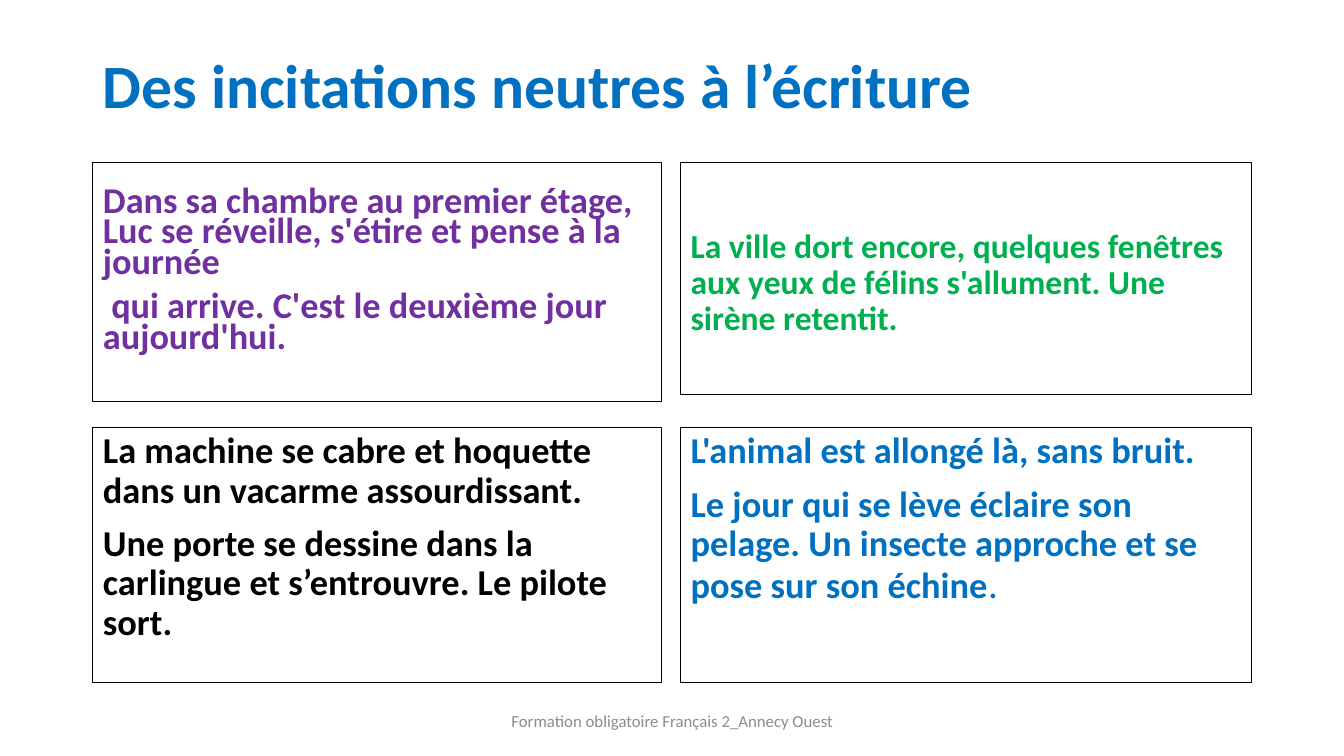
from lxml import etree
from pptx import Presentation
from pptx.dml.color import RGBColor
from pptx.enum import text
from pptx.oxml.ns import qn
from pptx.util import Cm, Pt

LEFT, RIGHT, TOP, BOTTOM = 2.34, 17.15, 4.09, 10.77
LEFT_WIDTH, RIGHT_WIDTH, BOTTOM_HEIGHT = 14.33, 14.4, 6.43
BLUE = "0070C0"


def colour(value):
    """Turn a hex string into a colour."""
    return RGBColor.from_string(value)


def style(font, size, value, bold=True):
    """Set the look of a paragraph or a span."""
    font.name, font.size, font.bold = "Calibri", Pt(size), bold
    font.color.rgb = colour(value)


def place(shape, left, top, width, height):
    """Move and size a shape, in centimetres."""
    shape.left, shape.top = Cm(left), Cm(top)
    shape.width, shape.height = Cm(width), Cm(height)


def set_frame(shape, anchor):
    """Wrap the text of a shape at its full size."""
    frame = shape.text_frame
    frame.word_wrap = True
    frame.auto_size = text.MSO_AUTO_SIZE.NONE
    frame.vertical_anchor = anchor
    return frame


def add_title(page, wording):
    """Fill the title placeholder."""
    title = page.shapes.title
    place(title, LEFT, 1.02, 29.21, 2.44)
    para = set_frame(title, text.MSO_ANCHOR.MIDDLE).paragraphs[0]
    para.text = wording
    para.alignment = text.PP_ALIGN.LEFT
    para.line_spacing = 0.9
    style(para.font, 44, BLUE)


def add_prompt(box, bounds, wordings, size, value, spacing=0.9, lift=None):
    """Fill a framed box; a lift raises bottom-anchored text."""
    place(box, *bounds)
    box.line.color.rgb = colour("000000")
    box.line.width = Pt(0.75)
    anchor = text.MSO_ANCHOR.BOTTOM if lift else text.MSO_ANCHOR.TOP
    frame = set_frame(box, anchor)
    if lift:
        frame.margin_bottom = Cm(lift)
    for index, wording in enumerate(wordings):
        para = frame.add_paragraph() if index else frame.paragraphs[0]
        para.text = wording
        properties = para._p.get_or_add_pPr()
        properties.set("marL", "0")
        properties.set("indent", "0")
        etree.SubElement(properties, qn("a:buNone"))
        para.alignment = text.PP_ALIGN.LEFT
        para.line_spacing = spacing
        para.space_before = Pt(10 if index else 0)
        style(para.font, size, value)
    return para


def add_footer(page, wording):
    """Add the centred line at the foot of the page."""
    box = page.shapes.add_textbox(0, 0, 0, 0)
    place(box, 11.23, 17.65, 11.43, 1.02)
    para = set_frame(box, text.MSO_ANCHOR.MIDDLE).paragraphs[0]
    para.text = wording
    para.alignment = text.PP_ALIGN.CENTER
    style(para.font, 12, "8C8C8C", bold=False)


def main():
    """Build the slide of four writing prompts."""
    deck = Presentation()
    deck.slide_width, deck.slide_height = Cm(33.87), Cm(19.05)
    page = deck.slides.add_slide(deck.slide_layouts[4])
    bedroom, machine, city, animal = list(page.placeholders)[1:]

    add_title(page, "Des incitations neutres à l’écriture")
    arrival = add_prompt(
        bedroom, (LEFT, TOP, LEFT_WIDTH, 6.02),
        ["Dans sa chambre au premier étage, Luc se réveille, s'étire et pense à la journée",
         "qui arrive. C'est le deuxième jour aujourd'hui."],
        25.9, "7030A0", spacing=0.7, lift=1.15)
    arrival._p.get_or_add_pPr().set("indent", str(Cm(0.21)))
    add_prompt(
        machine, (LEFT, BOTTOM, LEFT_WIDTH, BOTTOM_HEIGHT),
        ["La machine se cabre et hoquette dans un vacarme assourdissant.",
         "Une porte se dessine dans la carlingue et s’entrouvre. Le pilote sort."],
        26, "000000")
    add_prompt(
        city, (RIGHT, TOP, RIGHT_WIDTH, 5.84),
        ["La ville dort encore, quelques fenêtres aux yeux de félins s'allument. "
         "Une sirène retentit."],
        24, "00B050", lift=1.41)
    daybreak = add_prompt(
        animal, (RIGHT, BOTTOM, RIGHT_WIDTH, BOTTOM_HEIGHT),
        ["L'animal est allongé là, sans bruit.",
         "Le jour qui se lève éclaire son pelage. Un insecte approche et se pose sur son échine"],
        26, BLUE)
    full_stop = daybreak.add_run()
    full_stop.text = "."
    style(full_stop.font, 28, BLUE, bold=False)
    add_footer(page, "Formation obligatoire Français 2_Annecy Ouest")
    deck.save("out.pptx")


if __name__ == "__main__":
    main()
